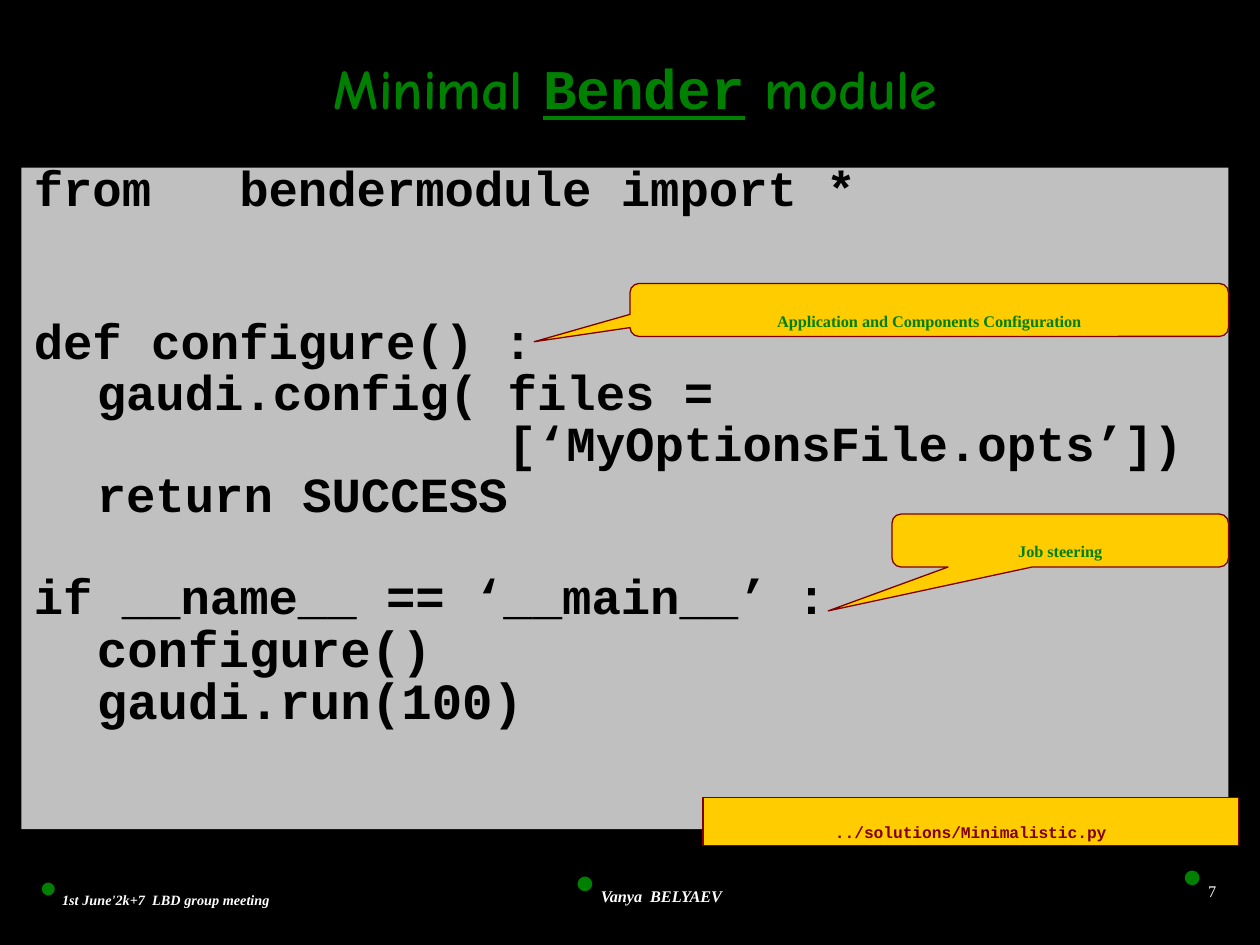
from dataclasses import dataclass

from lxml import etree
from pptx import Presentation
from pptx import util as u
from pptx.dml.color import RGBColor
from pptx.enum import shapes, text
from pptx.oxml import ns

BLACK = RGBColor(0x00, 0x00, 0x00)
WHITE = RGBColor(0xFF, 0xFF, 0xFF)
GREEN = RGBColor(0x00, 0x80, 0x00)
GREY = RGBColor(0xC0, 0xC0, 0xC0)
GOLD = RGBColor(0xFF, 0xCC, 0x00)
MAROON = RGBColor(0x80, 0x00, 0x00)

COMIC, COURIER, TIMES = "Comic Neue", "Courier New", "Times New Roman"
LINE_PITCH = 29.2  # points from one code line to the next
CODE_GAP = 5.6


@dataclass
class Area:
    left: float
    top: float
    width: float
    height: float

    def lengths(self):
        return [u.Inches(v) for v in (self.left, self.top, self.width, self.height)]


@dataclass
class Footer:
    area: Area
    words: str
    size: int
    emphasis: bool = True
    align: text.PP_ALIGN = text.PP_ALIGN.LEFT
    wrap: bool = True


@dataclass
class Label:
    kind: shapes.MSO_SHAPE
    area: Area
    words: str
    font: str
    color: RGBColor
    adjustments: tuple = ()


@dataclass
class CodeLine:
    words: str
    level: int = 0
    size: int = 28
    skipped: int = 0  # empty lines above


FOOTERS = [
    Footer(Area(0.22, 6.83, 4.17, 0.5), "1st June'2k+7  LBD group meeting", 14),
    Footer(Area(4.47, 6.75, 4.25, 0.58), "Vanya  BELYAEV", 16),
    Footer(Area(8.83, 6.75, 0.92, 0.5), "7", 16, False, text.PP_ALIGN.RIGHT, False),
]

CODE = [
    CodeLine("from   bendermodule import *"),
    CodeLine("def configure() :", skipped=2),
    CodeLine("gaudi.config( files =", 1),
    CodeLine("              [‘MyOptionsFile.opts’])", 1),
    CodeLine("return SUCCESS", 1),
    CodeLine("if __name__ == ‘__main__’ :", skipped=1),
    CodeLine("configure()", 1, 29),
    CodeLine("gaudi.run(100)", 1, 29),
]

CALLOUT = shapes.MSO_SHAPE.ROUNDED_RECTANGULAR_CALLOUT
LABELS = [
    Label(shapes.MSO_SHAPE.RECTANGLE, Area(5.58, 6.33, 4.25, 0.38),
          "../solutions/Minimalistic.py", COURIER, MAROON),
    Label(CALLOUT, Area(5, 2.25, 4.75, 0.42),
          "Application and Components Configuration", TIMES, GREEN, (-0.66, 0.6, 0.17)),
    Label(CALLOUT, Area(7.08, 4.08, 2.67, 0.42),
          "Job steering", TIMES, GREEN, (-0.69, 1.33, 0.17)),
]


def set_font(font, name: str, size: float, color: RGBColor, bold: bool = True) -> None:
    font.name, font.size, font.bold = name, u.Pt(size), bold
    font.color.rgb = color


def add_lowered_span(para, words: str) -> None:
    """Add a run set as subscript."""
    span = para.add_run()
    span.text = words
    span._r.get_or_add_rPr().set("baseline", "-25000")


def add_dot(para) -> None:
    """Give the paragraph a round green bullet."""
    properties = para._p.get_or_add_pPr()
    color = etree.SubElement(properties, ns.qn("a:buClr"))
    etree.SubElement(color, ns.qn("a:srgbClr"), val=str(GREEN))
    etree.SubElement(properties, ns.qn("a:buSzPct"), val="90000")
    etree.SubElement(properties, ns.qn("a:buFont"), typeface="Wingdings")
    etree.SubElement(properties, ns.qn("a:buChar"), char="l")


def add_panel(page, kind, area: Area, fill: RGBColor):
    panel = page.shapes.add_shape(kind, *area.lengths())
    panel.shadow.inherit = False
    panel.fill.solid()
    panel.fill.fore_color.rgb = fill
    panel.text_frame.word_wrap = True
    panel.text_frame.vertical_anchor = text.MSO_ANCHOR.TOP
    return panel


def add_text_frame(page, area: Area, wrap: bool = True):
    frame = page.shapes.add_textbox(*area.lengths()).text_frame
    frame.word_wrap = wrap
    frame.vertical_anchor = text.MSO_ANCHOR.MIDDLE
    return frame


def draw_footer(page, footer: Footer) -> None:
    para = add_text_frame(page, footer.area, footer.wrap).paragraphs[0]
    para.alignment = footer.align
    add_dot(para)
    set_font(para.font, TIMES, footer.size, WHITE, footer.emphasis)
    para.font.italic = footer.emphasis
    add_lowered_span(para, footer.words)


def draw_title(page) -> None:
    para = add_text_frame(page, Area(1.25, 0.42, 7.75, 0.67)).paragraphs[0]
    para.alignment = text.PP_ALIGN.CENTER
    para.line_spacing = 0.7
    for words, name in (("Minimal ", COMIC), ("Bender", COURIER), (" module ", COMIC)):
        span = para.add_run()
        span.text = words
        set_font(span.font, name, 32, GREEN)
        span.font.underline = name == COURIER


def draw_code(page) -> None:
    area = Area(0.17, 1.33, 9.58, 5.25)
    panel = add_panel(page, shapes.MSO_SHAPE.RECTANGLE, area, GREY)
    panel.line.fill.background()
    frame = panel.text_frame
    for index, line in enumerate(CODE):
        para = frame.add_paragraph() if index else frame.paragraphs[0]
        para.alignment = text.PP_ALIGN.LEFT
        para.level = line.level
        para.line_spacing = 0.7
        if index:
            para.space_before = u.Pt(CODE_GAP + line.skipped * LINE_PITCH)
        margin, indent = ((0.38, -0.38), (0.81, -0.31))[line.level]
        properties = para._p.get_or_add_pPr()
        properties.set("marL", str(u.Inches(margin)))
        properties.set("indent", str(u.Inches(indent)))
        set_font(para.font, COURIER, line.size, BLACK)
        para.add_run().text = line.words


def draw_label(page, label: Label) -> None:
    panel = add_panel(page, label.kind, label.area, GOLD)
    panel.line.color.rgb = MAROON
    panel.line.width = u.Pt(0.75)
    for index, value in enumerate(label.adjustments):
        panel.adjustments[index] = value
    para = panel.text_frame.paragraphs[0]
    para.alignment = text.PP_ALIGN.CENTER
    set_font(para.font, label.font, 16, label.color)
    add_lowered_span(para, label.words)


def main() -> None:
    deck = Presentation()
    deck.slide_width, deck.slide_height = u.Inches(10), u.Inches(7.5)
    page = deck.slides.add_slide(deck.slide_layouts[6])
    page.background.fill.solid()
    page.background.fill.fore_color.rgb = BLACK

    # Footer line, title, code listing, then the labels on top
    for footer in FOOTERS:
        draw_footer(page, footer)
    draw_title(page)
    draw_code(page)
    for label in LABELS:
        draw_label(page, label)
    deck.save("out.pptx")


if __name__ == "__main__":
    main()
